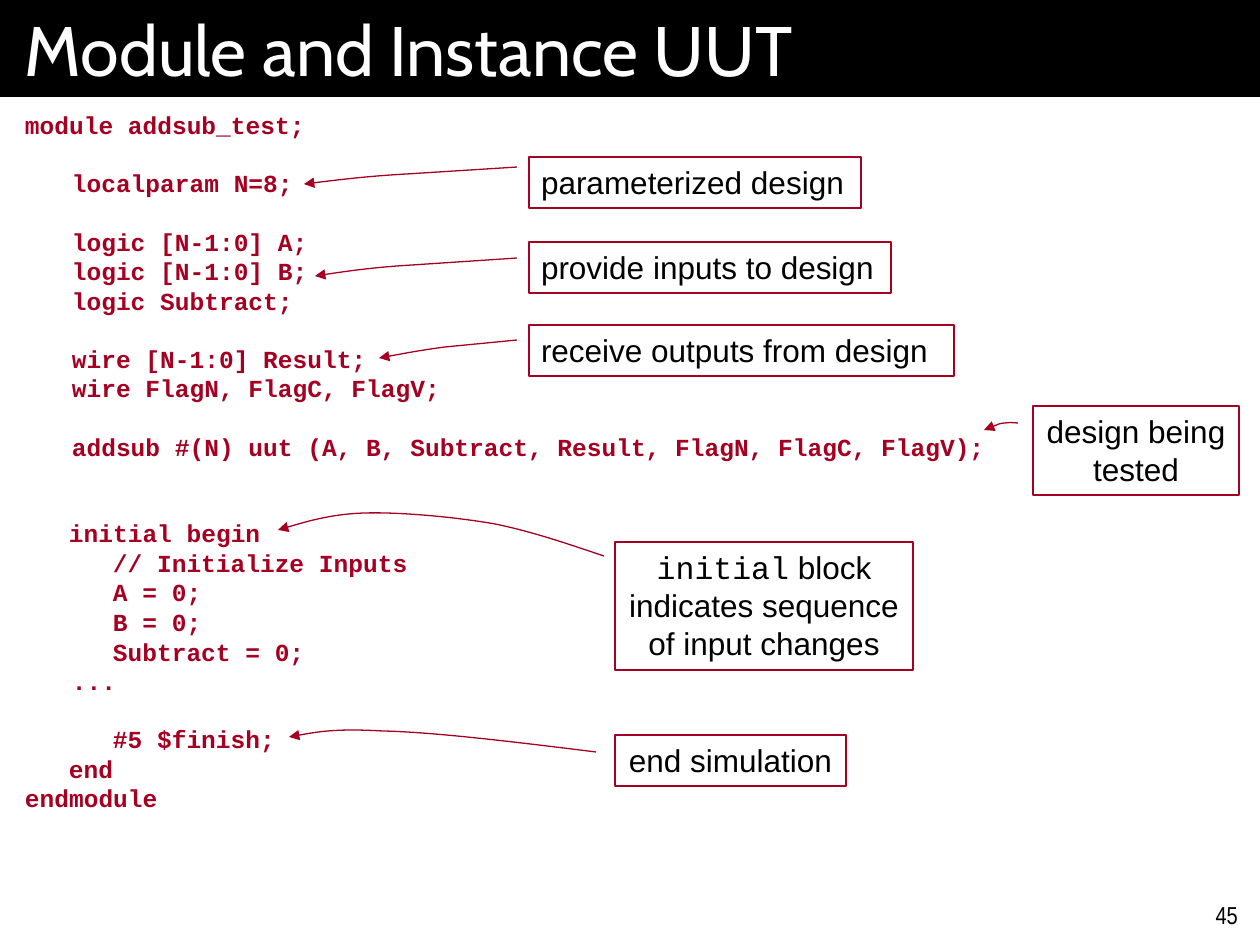
from lxml.etree import SubElement
from pptx import Presentation
from pptx.dml.color import RGBColor
from pptx.enum.text import MSO_ANCHOR as Anchor, PP_ALIGN as Align
from pptx.oxml.ns import qn
from pptx.util import Emu, Pt

SCALE = 914400 / 126
WHITE = RGBColor(0xFF, 0xFF, 0xFF)
BLACK = RGBColor(0x00, 0x00, 0x00)
CRIMSON = RGBColor(0xA5, 0x00, 0x21)
CODE_FONT = "Courier New"

LINE_GAP, LINE_PITCH = 3.5, 16.25
TAB, BLOCK, INNER = 47, 44, 88

# Indent in px, blank lines above, text
CODE = [
    (0, 0, "module addsub_test;"),
    (TAB, 1, "localparam N=8;"),
    (TAB, 1, "logic [N-1:0] A;"),
    (TAB, 0, "logic [N-1:0] B;"),
    (TAB, 0, "logic Subtract;"),
    (TAB, 1, "wire [N-1:0] Result;"),
    (TAB, 0, "wire FlagN, FlagC, FlagV;"),
    (TAB, 1, "addsub #(N) uut (A, B, Subtract, Result, FlagN, FlagC, FlagV);"),
    (BLOCK, 2, "initial begin"),
    (INNER, 0, "// Initialize Inputs"),
    (INNER, 0, "A = 0;"),
    (INNER, 0, "B = 0;"),
    (INNER, 0, "Subtract = 0;"),
    (TAB, 0, "..."),
    (INNER, 1, "#5 $finish;"),
    (BLOCK, 0, "end"),
    (0, 0, "endmodule"),
]

# Box, alignment, lines of text, arrow start, arrow segments:
# a segment of one point is straight, one of three points is a Bezier curve
CALLOUTS = [
    ((529, 157, 332, 51), Align.LEFT, ["parameterized design"],
     (517, 167), [[(406, 174)], [(370, 176), (336, 180), (304, 184)]]),
    ((529, 242, 362, 51), Align.LEFT, ["provide inputs to design"],
     (517, 258), [[(412, 265)], [(378, 267), (347, 271), (315, 276)]]),
    ((529, 325, 425, 51), Align.LEFT, ["receive outputs from design"],
     (517, 340), [[(445, 347)], [(422, 350), (401, 354), (379, 358)]]),
    ((615, 542, 298, 128), Align.CENTER,
     ["initial block", "indicates sequence", "of input changes"],
     (604, 556), [[(568, 544), (534, 532), (495, 524)],
                  [(455, 517), (401, 512), (365, 513)],
                  [(329, 514), (278, 530), (278, 530)]]),
    ((615, 735, 231, 51), Align.CENTER, ["end simulation"],
     (596, 752), [[(515, 742), (433, 732), (382, 731)],
                  [(331, 728), (289, 737), (289, 737)]]),
    ((1033, 406, 206, 89), Align.CENTER, ["design being", "tested"],
     (1018, 423), [[(1014, 423), (1012, 422), (1005, 423)],
                   [(1000, 423), (984, 430), (984, 430)]]),
]


def px(value):
    return Emu(round(value * SCALE))


def add_text_box(slide, box, margin_x=12, margin_y=6):
    shape = slide.shapes.add_textbox(*map(px, box))
    frame = shape.text_frame
    frame.word_wrap = True
    frame.margin_left = frame.margin_right = px(margin_x)
    frame.margin_top = frame.margin_bottom = px(margin_y)
    return shape


def add_paragraph(frame, text, font_name, size, color, align=Align.LEFT):
    """Fill the empty first paragraph, or append a new one."""
    first = frame.paragraphs[0]
    paragraph = frame.add_paragraph() if first.runs else first
    paragraph.add_run().text = text
    paragraph.alignment = align
    font = paragraph.font
    font.name, font.size, font.color.rgb = font_name, Pt(size), color
    return paragraph


def add_title(slide, text):
    shape = add_text_box(slide, (0, 0, 1260, 97), margin_x=25)
    shape.fill.solid()
    shape.fill.fore_color.rgb = BLACK
    shape.text_frame.vertical_anchor = Anchor.MIDDLE
    add_paragraph(shape.text_frame, text, "Cabin", 40, WHITE)


def add_code(slide):
    frame = add_text_box(slide, (0, 97, 1260, 848), 25, 19).text_frame
    for indent, blank_lines, text in CODE:
        paragraph = add_paragraph(frame, text, CODE_FONT, 14, CRIMSON)
        paragraph.font.bold = True
        paragraph.line_spacing = 0.8
        paragraph.space_before = Pt(LINE_GAP + blank_lines * LINE_PITCH)
        paragraph._p.get_or_add_pPr().set("marL", str(px(indent)))


def style_line(shape):
    shape.line.color.rgb = CRIMSON
    shape.line.width = Pt(0.75)


def add_label(slide, box, align, lines):
    shape = add_text_box(slide, box)
    style_line(shape)
    for text in lines:
        paragraph = add_paragraph(shape.text_frame, text, "Arial", 18, BLACK, align)
        keyword, space, rest = text.partition(" ")
        if keyword == "initial":
            run = paragraph.runs[0]
            run.text = keyword
            run.font.name = CODE_FONT
            paragraph.add_run().text = space + rest


def add_curved_arrow(slide, start, segments):
    points = [point for segment in segments for point in segment]
    builder = slide.shapes.build_freeform(*start, scale=SCALE)
    builder.add_line_segments(points, close=False)
    shape = builder.convert_to_shape()
    shape.shadow.inherit = False
    shape.fill.background()
    style_line(shape)
    SubElement(shape.line._get_or_add_ln(), qn("a:tailEnd"), type="triangle")

    # Gather the points of each curved segment into one Bezier command
    steps = iter(shape._element.findall(".//" + qn("a:lnTo")))
    for segment in segments:
        parts = [next(steps) for _ in segment]
        if len(parts) == 3:
            curve = parts[0]
            outline = curve.getparent()
            bezier = SubElement(outline, qn("a:cubicBezTo"))
            for part in parts:
                bezier.append(part[0])
                outline.remove(part)


def add_page_number(slide, number):
    frame = add_text_box(slide, (1197, 894, 53, 42)).text_frame
    add_paragraph(frame, number, "Arial Narrow", 14, BLACK, Align.RIGHT)


def main():
    presentation = Presentation()
    presentation.slide_width, presentation.slide_height = px(1260), px(945)
    slide = presentation.slides.add_slide(presentation.slide_layouts[6])
    add_page_number(slide, "45")
    add_title(slide, "Module and Instance UUT")
    add_code(slide)
    for box, align, lines, start, segments in CALLOUTS:
        add_label(slide, box, align, lines)
        add_curved_arrow(slide, start, segments)
    presentation.save("out.pptx")


if __name__ == "__main__":
    main()
